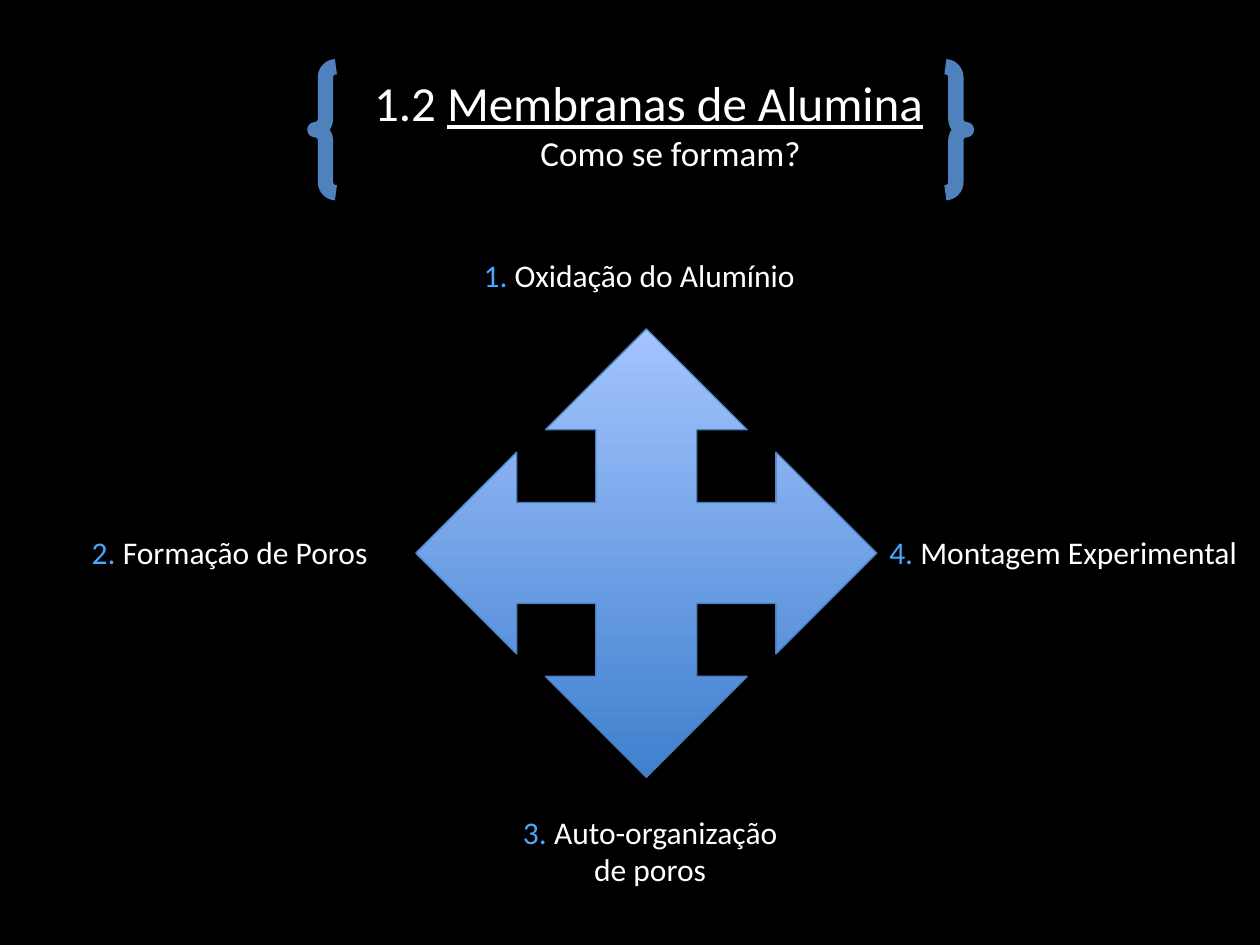
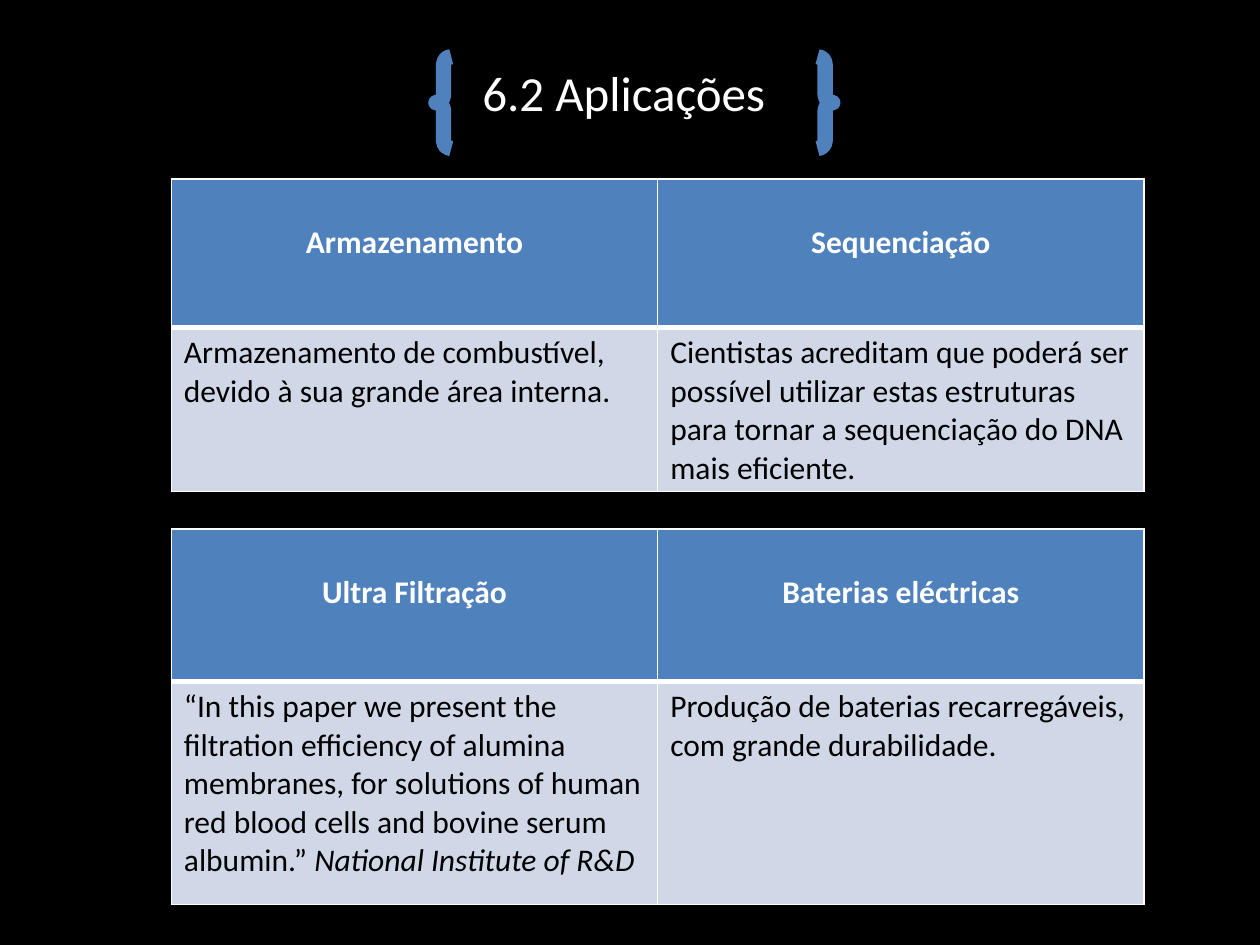
from dataclasses import dataclass

from lxml.etree import SubElement
from pptx import Presentation
from pptx.dml.color import RGBColor
from pptx.enum.shapes import MSO_SHAPE
from pptx.enum.text import PP_ALIGN
from pptx.oxml.ns import qn
from pptx.util import Inches, Pt


@dataclass(frozen=True)
class Theme:
    font: str = "Calibri"
    background: str = "000000"
    light: str = "FFFFFF"
    dark: str = "000000"
    accent: str = "4F81BD"
    number: str = "4AA7FF"
    cell: str = "D0D8E8"
    arrow_bottom: str = "3F80CE"
    arrow_top: str = "A4C4FF"
    arrow_edge: str = "4B7EBC"
    title_size: int = 28
    subtitle_size: int = 20
    body_size: int = 18
    brace_width: float = 8.75
    edge_width: float = 0.75
    border: int = 1
    thick_border: int = 3


THEME = Theme()


def color(value):
    return RGBColor.from_string(value)


def add_span(para, text, size=THEME.body_size, ink=THEME.light,
             bold=False, italic=False, underline=False):
    span = para.add_run()
    span.text = text
    font = span.font
    font.name, font.size = THEME.font, Pt(size)
    font.color.rgb = color(ink)
    font.bold, font.italic, font.underline = bold, italic, underline


def add_page(deck):
    page = deck.slides.add_slide(deck.slide_layouts[6])
    page.background.fill.solid()
    page.background.fill.fore_color.rgb = color(THEME.background)
    return page


def add_box(page, left, top, width, height, wrap=False):
    box = page.shapes.add_textbox(Inches(left), Inches(top), Inches(width), Inches(height))
    box.text_frame.word_wrap = wrap
    return box.text_frame


def add_preset(page, preset, place, line_color, line_width):
    shape = page.shapes.add_shape(preset, *map(Inches, place))
    shape.shadow.inherit = False
    shape.line.color.rgb = color(line_color)
    shape.line.width = Pt(line_width)
    return shape


def add_braces(page, *place):
    braces = add_preset(page, MSO_SHAPE.DOUBLE_BRACE, place, THEME.accent, THEME.brace_width)
    braces.fill.background()


def add_title(page, left, top, width, height, number, name, underline=False):
    frame = add_box(page, left, top, width, height, wrap=True)
    para = frame.paragraphs[0]
    add_span(para, number + " ", THEME.title_size)
    add_span(para, name, THEME.title_size, underline=underline)
    return frame


def add_subtitle(frame, text, indent):
    para = frame.add_paragraph()
    para._p.get_or_add_pPr().set("marL", str(Inches(indent)))
    add_span(para, text, THEME.subtitle_size)


def add_step(page, number, text, left, top, width, height=0.4, centred=False):
    para = add_box(page, left, top, width, height, wrap=centred).paragraphs[0]
    para.alignment = PP_ALIGN.CENTER if centred else PP_ALIGN.LEFT
    add_span(para, f"{number}. ", ink=THEME.number)
    add_span(para, text)


def add_four_way_arrow(page, *place):
    arrow = add_preset(page, MSO_SHAPE.QUAD_ARROW, place, THEME.arrow_edge, THEME.edge_width)
    arrow.fill.gradient()
    arrow.fill.gradient_angle = 90
    stops = zip(arrow.fill.gradient_stops, (0, 1), (THEME.arrow_bottom, THEME.arrow_top))
    for stop, position, value in stops:
        stop.position = position
        stop.color.rgb = color(value)


def style_cell(cell, fill, thick_side):
    properties = cell._tc.get_or_add_tcPr()
    for side in ("lnL", "lnR", "lnT", "lnB"):
        width = THEME.thick_border if side == thick_side else THEME.border
        line = SubElement(properties, qn(f"a:{side}"), w=str(Pt(width)))
        solid = SubElement(line, qn("a:solidFill"))
        SubElement(solid, qn("a:srgbClr"), val=THEME.light)
    cell.fill.solid()
    cell.fill.fore_color.rgb = color(fill)


def add_application_table(page, top, row_heights, columns):
    table = page.shapes.add_table(2, len(columns), Inches(1.36), Inches(top),
                                  Inches(7.72), Inches(sum(row_heights))).table
    for row, height in zip(table.rows, row_heights):
        row.height = Inches(height)
    for index, (heading, *body) in enumerate(columns):
        header, detail = table.cell(0, index), table.cell(1, index)
        style_cell(header, THEME.accent, "lnB")
        header.margin_top = Inches(0.35)
        para = header.text_frame.paragraphs[0]
        para.alignment = PP_ALIGN.CENTER
        add_span(para, heading, bold=True)
        style_cell(detail, THEME.cell, "lnT")
        for text, italic in body:
            add_span(detail.text_frame.paragraphs[0], text, ink=THEME.dark, italic=italic)


def build_formation(deck):
    page = add_page(deck)
    add_braces(page, 2.5, 0.53, 5.17, 1)
    title = add_title(page, 2.87, 0.53, 4.79, 1.25, "1.2", "Membranas de Alumina", underline=True)
    add_subtitle(title, "Como se formam?", 1.32)
    add_four_way_arrow(page, 3.3, 2.61, 3.66, 3.56)
    add_step(page, 1, "Oxidação do Alumínio", 3.74, 1.98, 2.83)
    add_step(page, 2, "Formação de Poros", 0.63, 4.18, 2.44)
    add_step(page, 3, "Auto-organização de poros", 3.94, 6.4, 2.44, 0.71, centred=True)
    add_step(page, 4, "Montagem Experimental", 6.96, 4.18, 3.04)


def build_applications(deck):
    page = add_page(deck)
    add_braces(page, 3.46, 0.45, 3.15, 0.73)
    add_title(page, 3.73, 0.45, 2.88, 0.57, "6.2", "Aplicações")
    add_application_table(page, 1.42, (1.18, 1.3), [
        ("Armazenamento",
         ("Armazenamento de combustível, devido à sua grande área interna.", False)),
        ("Sequenciação",
         ("Cientistas acreditam que poderá ser possível utilizar estas estruturas "
          "para tornar a sequenciação do DNA mais eficiente.", False)),
    ])
    add_application_table(page, 4.2, (1.21, 1.77), [
        ("Ultra Filtração",
         ("“In this paper we present the filtration efficiency of alumina membranes, "
          "for solutions of human red blood cells and bovine serum albumin.” ", False),
         ("National Institute of R&D", True)),
        ("Baterias eléctricas",
         ("Produção de baterias recarregáveis, com grande durabilidade.", False)),
    ])


def main():
    deck = Presentation()
    deck.slide_width, deck.slide_height = Inches(10), Inches(7.5)
    build_formation(deck)
    build_applications(deck)
    deck.save("out.pptx")


if __name__ == "__main__":
    main()
